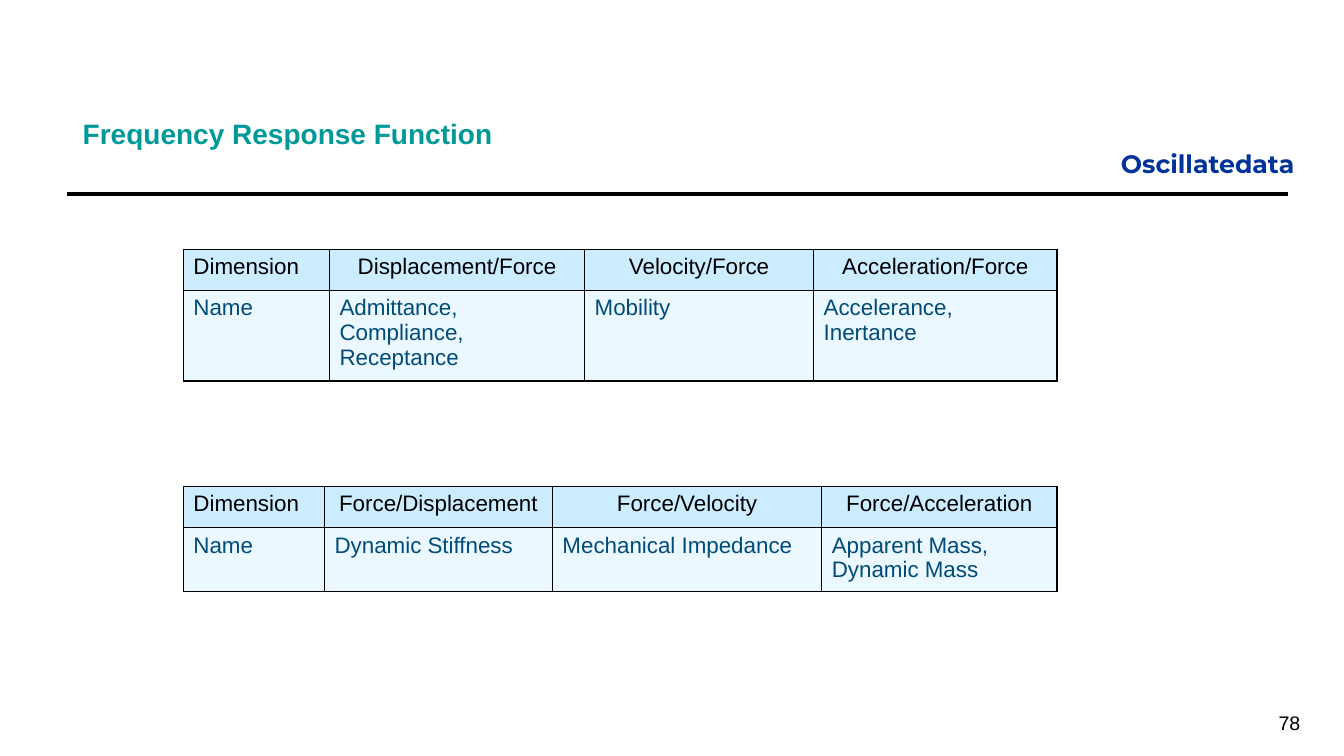
from dataclasses import dataclass

from lxml import etree
from pptx import Presentation
from pptx import util as u
from pptx.dml.color import RGBColor
from pptx.enum import shapes, text
from pptx.oxml import ns


@dataclass(frozen=True)
class Theme:
    font: str = "Arial"
    brand_font: str = "Montserrat"
    title: str = "009999"
    brand: str = "003399"
    ink: str = "000000"
    page: str = "010000"
    body: str = "004B78"
    header_fill: str = "CCECFF"
    body_fill: str = "ECF8FF"
    title_size: int = 20
    brand_size: int = 18
    table_size: int = 16
    page_size: int = 14


LEFT, CENTER, RIGHT = (text.PP_ALIGN.LEFT, text.PP_ALIGN.CENTER,
                       text.PP_ALIGN.RIGHT)
TOP, MIDDLE = text.MSO_ANCHOR.TOP, text.MSO_ANCHOR.MIDDLE


class SlideBuilder:
    def __init__(self, s, theme):
        self.s = s
        self.theme = theme

    def style(self, p, size, color, bold=False, font=None, align=LEFT):
        p.alignment = align
        p.font.name = font or self.theme.font
        p.font.size = u.Pt(size)
        p.font.bold = bold
        p.font.color.rgb = RGBColor.from_string(color)

    def label(self, box, words, size, color, anchor=MIDDLE, spacing=None, **look):
        tf = self.s.shapes.add_textbox(*map(u.Pt, box)).text_frame
        tf.word_wrap = True
        tf.vertical_anchor = anchor
        p = tf.paragraphs[0]
        p.text = words
        if spacing:
            p.line_spacing = spacing
        self.style(p, size, color, **look)

    def rule(self, x1, x2, y, weight):
        line = self.s.shapes.add_connector(
            shapes.MSO_CONNECTOR.STRAIGHT, *map(u.Pt, (x1, y, x2, y)))
        line.line.color.rgb = RGBColor.from_string(self.theme.ink)
        line.line.width = u.Pt(weight)
        etree.SubElement(line._element.spPr, ns.qn("a:effectLst"))

    def border(self, cell):
        """Draw thin lines on all four sides, placed ahead of the cell's fill."""
        tc_pr = cell._tc.get_or_add_tcPr()
        for i, side in enumerate(("lnL", "lnR", "lnT", "lnB")):
            ln = etree.Element(ns.qn(f"a:{side}"), w=str(u.Pt(1)))
            fill = etree.SubElement(ln, ns.qn("a:solidFill"))
            etree.SubElement(fill, ns.qn("a:srgbClr"), val=self.theme.ink)
            tc_pr.insert(i, ln)

    def table(self, left, top, widths, row_height, rows):
        t = self.theme
        table = self.s.shapes.add_table(
            len(rows), len(widths), u.Pt(left), u.Pt(top),
            u.Pt(sum(widths)), u.Pt(row_height * len(rows))).table
        for column, width in zip(table.columns, widths):
            column.width = u.Pt(width)
        for r, row in enumerate(rows):
            fill, color = ((t.body_fill, t.body) if r
                           else (t.header_fill, t.ink))
            for c, words in enumerate(row):
                cell = table.cell(r, c)
                cell.fill.solid()
                cell.fill.fore_color.rgb = RGBColor.from_string(fill)
                self.border(cell)
                cell.text = words
                align = CENTER if r == 0 and c > 0 else LEFT
                for p in cell.text_frame.paragraphs:
                    self.style(p, t.table_size, color, align=align)


def main():
    prs = Presentation()
    prs.slide_width, prs.slide_height = u.Pt(960), u.Pt(540)
    theme = Theme()
    slide = SlideBuilder(prs.slides.add_slide(prs.slide_layouts[6]), theme)

    slide.label((296, 102.2, 635.8, 51), "Oscillatedata", theme.brand_size,
                theme.brand, anchor=TOP, bold=True, font=theme.brand_font,
                align=RIGHT)
    slide.rule(48, 920, 138.4, 3)
    slide.label((52, 53.3, 480, 90), "Frequency Response Function",
                theme.title_size, theme.title, spacing=0.7, bold=True)
    slide.label((736, 498.2, 200, 36), "78", theme.page_size, theme.page,
                align=RIGHT)

    table_left, row_height = 131, 29.4
    slide.table(table_left, 178, (104.4, 182.2, 163.6, 173.8), row_height, (
        ("Dimension", "Displacement/Force", "Velocity/Force",
         "Acceleration/Force"),
        ("Name", "Admittance,\nCompliance,\nReceptance", "Mobility",
         "Accelerance,\nInertance")))
    slide.table(table_left, 347.6, (100.8, 162.8, 192.4, 168), row_height, (
        ("Dimension", "Force/Displacement", "Force/Velocity",
         "Force/Acceleration"),
        ("Name", "Dynamic Stiffness", "Mechanical Impedance",
         "Apparent Mass,\nDynamic Mass")))

    prs.save("out.pptx")


if __name__ == "__main__":
    main()
